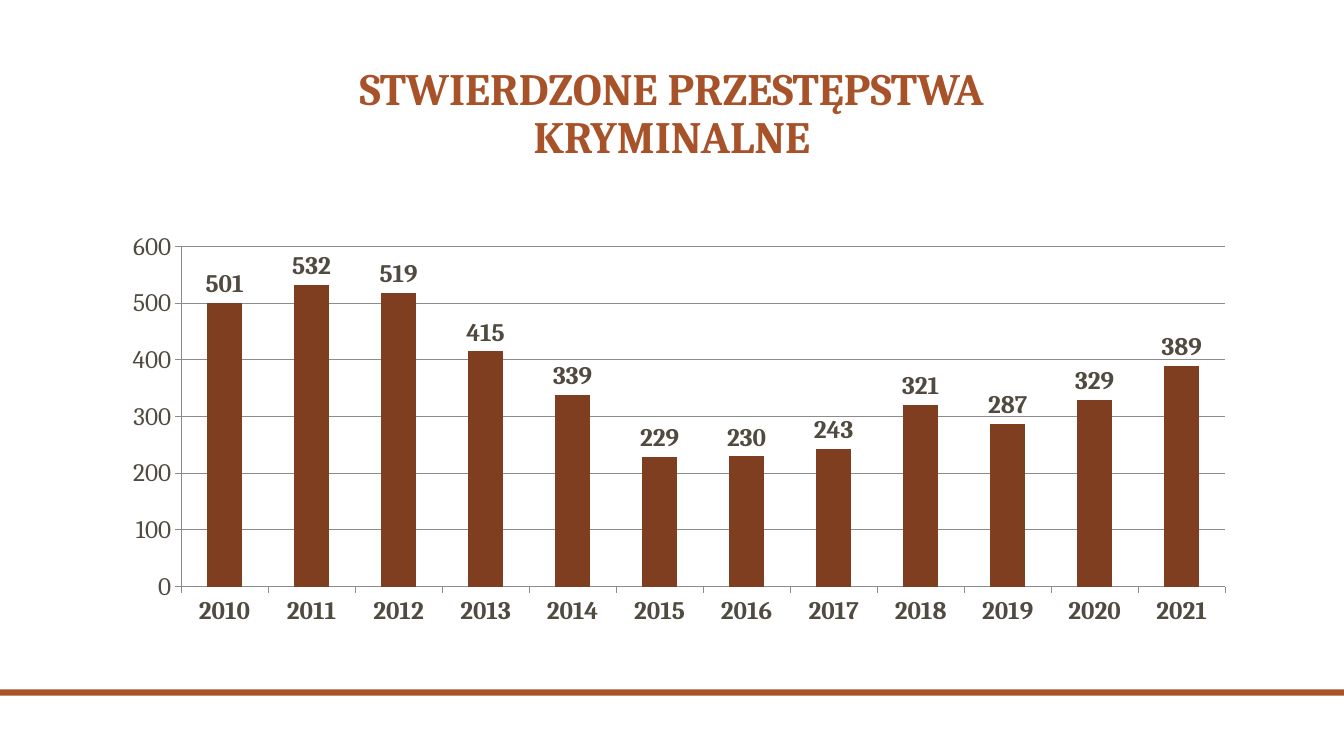
from dataclasses import dataclass

import pptx
import pptx.chart.data
import pptx.dml.color
import pptx.enum.chart
import pptx.enum.shapes
import pptx.enum.text
import pptx.util
from pptx.util import Cm


@dataclass(frozen=True)
class Theme:
    font: str = "Cambria"
    accent: str = "A85229"
    column: str = "7E3E1F"
    text: str = "514A40"
    line: str = "8C8C8C"
    title_size: int = 32
    chart_size: int = 18


THEME = Theme()
FIRST_YEAR = 2010
CRIMES = (501, 532, 519, 415, 339, 229, 230, 243, 321, 287, 329, 389)


def color(value):
    return pptx.dml.color.RGBColor.from_string(value)


def style_font(font, size, value, bold=False):
    font.name = THEME.font
    font.size = pptx.util.Pt(size)
    font.bold = bold
    font.color.rgb = color(value)


def add_footer_band(slide, left, top, width, height):
    band = slide.shapes.add_shape(
        pptx.enum.shapes.MSO_SHAPE.RECTANGLE, left, top, width, height)
    band.shadow.inherit = False
    band.fill.solid()
    band.fill.fore_color.rgb = color(THEME.accent)
    band.line.fill.background()


def place_title(slide, left, top, width, height):
    title = slide.shapes.title
    title.left, title.top, title.width, title.height = left, top, width, height
    frame = title.text_frame
    frame.word_wrap = True
    frame.vertical_anchor = pptx.enum.text.MSO_ANCHOR.BOTTOM
    paragraph = frame.paragraphs[0]
    paragraph.text = "STWIERDZONE PRZESTĘPSTWA\vKRYMINALNE"
    paragraph.alignment = pptx.enum.text.PP_ALIGN.CENTER
    paragraph.line_spacing = 0.9
    style_font(paragraph.font, THEME.title_size, THEME.accent, bold=True)


def style_axis(axis, bold=False):
    axis.major_tick_mark = pptx.enum.chart.XL_TICK_MARK.OUTSIDE
    axis.minor_tick_mark = pptx.enum.chart.XL_TICK_MARK.NONE
    axis.format.line.color.rgb = color(THEME.line)
    axis.format.line.width = pptx.util.Pt(0.75)
    style_font(axis.tick_labels.font, THEME.chart_size, THEME.text, bold)


def add_crime_chart(slide, left, top, width, height):
    data = pptx.chart.data.CategoryChartData()
    data.categories = [str(FIRST_YEAR + offset) for offset in range(len(CRIMES))]
    data.add_series("Series 1", CRIMES)
    chart = slide.shapes.add_chart(
        pptx.enum.chart.XL_CHART_TYPE.COLUMN_CLUSTERED,
        left, top, width, height, data).chart
    chart.has_legend = False
    chart.has_title = False
    style_font(chart.font, THEME.chart_size, THEME.text)

    # Axes and gridlines
    style_axis(chart.category_axis, bold=True)
    value_axis = chart.value_axis
    style_axis(value_axis)
    value_axis.minimum_scale, value_axis.maximum_scale = 0, 600
    value_axis.major_unit = 100
    value_axis.has_major_gridlines = True
    gridline = value_axis.major_gridlines.format.line
    gridline.color.rgb = color(THEME.line)
    gridline.width = pptx.util.Pt(0.75)

    # Columns and their values
    plot = chart.plots[0]
    plot.gap_width = 150
    plot.vary_by_categories = False
    series = plot.series[0]
    series.format.fill.solid()
    series.format.fill.fore_color.rgb = color(THEME.column)
    labels = series.data_labels
    labels.show_value = True
    labels.position = pptx.enum.chart.XL_LABEL_POSITION.OUTSIDE_END
    style_font(labels.font, THEME.chart_size, THEME.text, bold=True)


def main():
    presentation = pptx.Presentation()
    presentation.slide_width = Cm(33.87)
    presentation.slide_height = Cm(19.05)
    title_only = presentation.slide_layouts.get_by_name("Title Only")
    slide = presentation.slides.add_slide(title_only)

    add_footer_band(slide, 0, Cm(17.37), presentation.slide_width, Cm(0.16))
    place_title(slide, Cm(3.6), Cm(1.06), Cm(26.67), Cm(3.18))
    add_crime_chart(slide, Cm(2.77), Cm(5.64), Cm(28.68), Cm(10.34))

    presentation.save("out.pptx")


if __name__ == "__main__":
    main()
